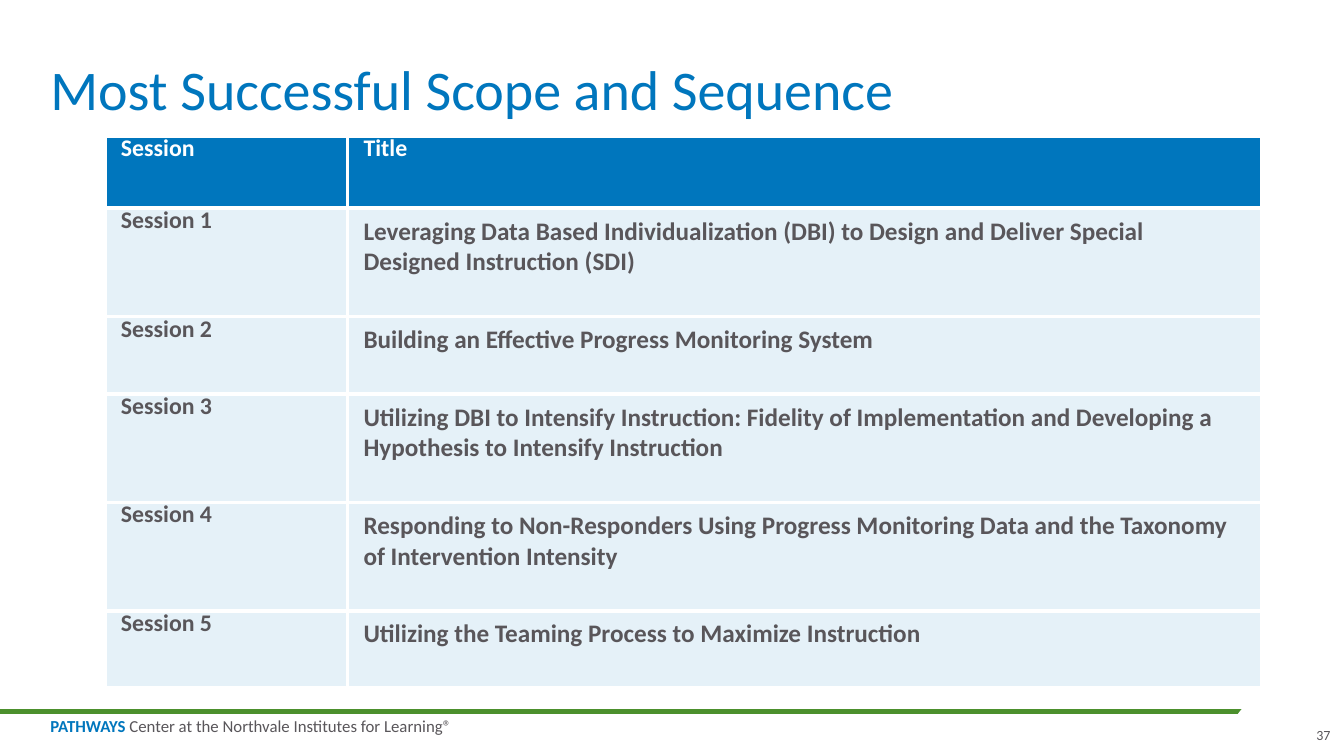
"""Build the slide that lists the sessions of the scope and sequence."""
from dataclasses import dataclass

from lxml import etree
from pptx import Presentation
from pptx.dml.color import RGBColor
from pptx.enum.shapes import MSO_CONNECTOR, MSO_SHAPE
from pptx.enum.text import MSO_ANCHOR, PP_ALIGN
from pptx.oxml.ns import qn
from pptx.util import Pt

STRAIGHT = MSO_CONNECTOR.STRAIGHT
OVAL = MSO_SHAPE.OVAL
TOP, BOTTOM = MSO_ANCHOR.TOP, MSO_ANCHOR.BOTTOM
LEFT, RIGHT = PP_ALIGN.LEFT, PP_ALIGN.RIGHT

FONT = "Calibri"
BLUE, GRAY, GREEN = "0076BD", "59565A", "4C902D"
WHITE, PALE = "FFFFFF", "E5F1F8"


@dataclass(frozen=True)
class Span:
    text: str
    size: float
    color: str
    bold: bool = False


@dataclass(frozen=True)
class Label:
    left: float
    top: float
    width: float
    height: float
    spans: tuple[Span, ...]
    spacing: float = 1.0
    align: PP_ALIGN = LEFT
    anchor: MSO_ANCHOR = TOP
    wrap: bool = False


@dataclass(frozen=True)
class SessionRow:
    name: str
    title: str
    height: float


LABELS = (
    Label(36, 0, 892.8, 87.6, (Span("Most Successful Scope and Sequence", 40, BLUE),),
          spacing=0.9, anchor=BOTTOM, wrap=True),
    Label(36, 513.4, 289.4, 12.2,
          (Span("PATHWAYS", 12, BLUE, True),
           Span(" Center at the Northvale Institutes for Learning®", 12, GRAY)),
          spacing=0.85),
    Label(938.2, 518.9, 12.2, 12.2, (Span("37", 10, GRAY),), align=RIGHT, anchor=BOTTOM),
)

ROWS = (
    SessionRow("Session", "Title", 51.5),
    SessionRow("Session 1", "Leveraging Data Based Individualization (DBI) to Design and "
               "Deliver Special Designed Instruction (SDI)", 77.4),
    SessionRow("Session 2", "Building an Effective Progress Monitoring System", 55.4),
    SessionRow("Session 3", "Utilizing DBI to Intensify Instruction: Fidelity of Implementation "
               "and Developing a Hypothesis to Intensify Instruction", 77.4),
    SessionRow("Session 4", "Responding to Non-Responders Using Progress Monitoring Data and "
               "the Taxonomy of Intervention Intensity", 77.4),
    SessionRow("Session 5", "Utilizing the Teaming Process to Maximize Instruction", 55.4),
)
COLUMN_WIDTHS = (173.3, 653.3)


def rgb(value: str) -> RGBColor:
    """Turn a hex string into a colour."""
    return RGBColor.from_string(value)


def add_span(para, span: Span) -> None:
    """Add one formatted run to a paragraph."""
    run = para.add_run()
    run.text = span.text
    run.font.name = FONT
    run.font.size = Pt(span.size)
    run.font.bold = span.bold
    run.font.color.rgb = rgb(span.color)


def add_label(page, label: Label) -> None:
    """Draw a text box without margins."""
    box = page.shapes.add_textbox(Pt(label.left), Pt(label.top), Pt(label.width), Pt(label.height))
    frame = box.text_frame
    frame.margin_left = frame.margin_right = frame.margin_top = frame.margin_bottom = Pt(0)
    frame.word_wrap = label.wrap
    frame.vertical_anchor = label.anchor
    para = frame.paragraphs[0]
    para.alignment = label.align
    para.line_spacing = label.spacing
    for span in label.spans:
        add_span(para, span)


def add_footer_rule(page) -> None:
    """Draw the green rule and the white oval that trims its right end."""
    rule = page.shapes.add_connector(STRAIGHT, Pt(0), Pt(508.3), Pt(936), Pt(508.3))
    rule.line.color.rgb = rgb(GREEN)
    rule.line.width = Pt(3)
    etree.SubElement(rule._element.spPr, qn("a:effectLst"))
    trim = page.shapes.add_shape(OVAL, Pt(875.5), Pt(487.4), Pt(85.7), Pt(41.8))
    trim.rotation = 332.1
    trim.shadow.inherit = False
    trim.fill.solid()
    trim.fill.fore_color.rgb = rgb(WHITE)
    trim.line.fill.background()


def add_borders(cell, color: str, width: float) -> None:
    """Give all four sides of a cell the same line."""
    properties = cell._tc.get_or_add_tcPr()
    for side in ("lnL", "lnR", "lnT", "lnB"):
        line = etree.SubElement(properties, qn(f"a:{side}"), w=str(Pt(width)))
        fill = etree.SubElement(line, qn("a:solidFill"))
        etree.SubElement(fill, qn("a:srgbClr"), val=color)


def fill_cell(cell, span: Span, fill: str, tight: bool) -> None:
    """Write and format one table cell."""
    add_borders(cell, WHITE, 3)
    cell.fill.solid()
    cell.fill.fore_color.rgb = rgb(fill)
    cell.margin_left = cell.margin_right = Pt(11.5)
    cell.margin_top = cell.margin_bottom = Pt(5.75)
    cell.vertical_anchor = TOP
    para = cell.text_frame.paragraphs[0]
    if tight:
        para.line_spacing = Pt(13.5)
    add_span(para, span)


def add_sessions(page) -> None:
    """Draw the table of sessions."""
    table = page.shapes.add_table(
        len(ROWS), len(COLUMN_WIDTHS), Pt(74.9), Pt(97.2),
        Pt(sum(COLUMN_WIDTHS)), Pt(sum(row.height for row in ROWS))).table
    for column, width in zip(table.columns, COLUMN_WIDTHS):
        column.width = Pt(width)
    for index, row in enumerate(ROWS):
        table.rows[index].height = Pt(row.height)
        header = index == 0
        color, fill = (WHITE, BLUE) if header else (GRAY, PALE)
        title_size = 17 if header else 18
        fill_cell(table.cell(index, 0), Span(row.name, 17, color, True), fill, True)
        fill_cell(table.cell(index, 1), Span(row.title, title_size, color, True), fill, header)


def main() -> None:
    """Build and save the deck."""
    deck = Presentation()
    deck.slide_width, deck.slide_height = Pt(960), Pt(540)
    page = deck.slides.add_slide(deck.slide_layouts[6])
    add_footer_rule(page)
    for label in LABELS:
        add_label(page, label)
    add_sessions(page)
    deck.save("out.pptx")


if __name__ == "__main__":
    main()
